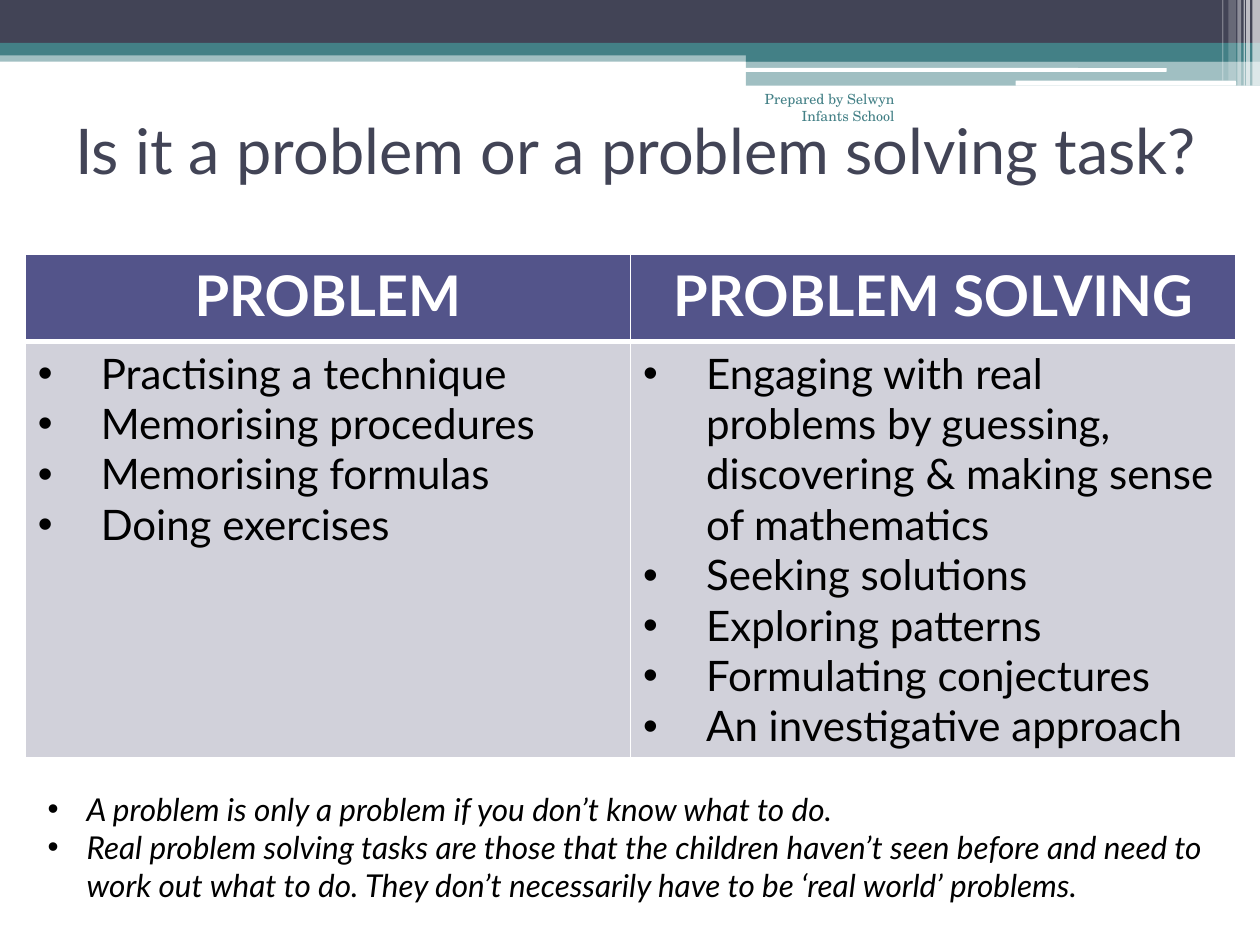
from dataclasses import dataclass

from lxml.etree import SubElement
from pptx import Presentation
from pptx.dml.color import RGBColor
from pptx.enum.shapes import MSO_SHAPE as Shape
from pptx.enum.text import MSO_ANCHOR as Anchor, PP_ALIGN as Align
from pptx.oxml import parse_xml
from pptx.oxml.ns import nsdecls, qn
from pptx.util import Inches, Pt


@dataclass(frozen=True)
class Theme:
    """Colours, fonts and type sizes of the slide."""
    slate: str = "424456"
    teal: str = "438086"
    indigo: str = "53548A"
    lilac: str = "D1D1DA"
    white: str = "FFFFFF"
    black: str = "000000"
    font: str = "Lato"
    credit_font: str = "TeX Gyre Schola"
    title_size: int = 36
    heading_size: int = 32
    list_size: int = 24
    note_size: int = 18
    credit_size: int = 8


THEME = Theme()

COMPARISON = {
    "PROBLEM": [
        "Practising a technique",
        "Memorising procedures",
        "Memorising formulas",
        "Doing exercises",
    ],
    "PROBLEM SOLVING": [
        "Engaging with real problems by guessing, discovering & making sense of mathematics",
        "Seeking solutions",
        "Exploring patterns",
        "Formulating conjectures",
        "An investigative approach",
    ],
}
NOTES = [
    "A problem is only a problem if you don’t know what to do.",
    "Real problem solving tasks are those that the children haven’t seen before and need to "
    "work out what to do. They don’t necessarily have to be ‘real world’ problems.",
]


def inches(box):
    """Turn a box of plain numbers into lengths."""
    return [Inches(length) for length in box]


def style(paragraph, size, color, font=THEME.font, align=Align.LEFT, bold=False, italic=False):
    """Format a whole paragraph."""
    paragraph.alignment = align
    paragraph.font.name = font
    paragraph.font.size = Pt(size)
    paragraph.font.bold = bold
    paragraph.font.italic = italic
    paragraph.font.color.rgb = RGBColor.from_string(color)


def fill_list(frame, items, indent, size, italic=False):
    """Write items as bulleted paragraphs with a hanging indent."""
    frame.text = "\n".join(items)
    for paragraph in frame.paragraphs:
        style(paragraph, size, THEME.black, italic=italic)
        properties = paragraph._p.get_or_add_pPr()
        properties.set("marL", str(Inches(indent)))
        properties.set("indent", str(-Inches(indent)))
        bullet_font = parse_xml(f'<a:buFont {nsdecls("a")} typeface="Arial"/>')
        bullet = parse_xml(f'<a:buChar {nsdecls("a")} char="•"/>')
        properties.insert_element_before(bullet_font, "a:tabLst", "a:defRPr", "a:extLst")
        properties.insert_element_before(bullet, "a:tabLst", "a:defRPr", "a:extLst")


def add_bar(slide, box, color, opacity=100, shape=Shape.RECTANGLE):
    """Add one borderless bar."""
    bar = slide.shapes.add_shape(shape, *inches(box))
    bar.shadow.inherit = False
    bar.line.fill.background()
    bar.fill.solid()
    bar.fill.fore_color.rgb = RGBColor.from_string(color)
    if opacity < 100:
        tint = bar._element.spPr.find(qn("a:solidFill"))[0]
        SubElement(tint, qn("a:alpha"), val=str(opacity * 1000))


def add_banner(slide, box):
    """Draw the layered bands and the fine stripes at the right end."""
    left, top, width, height = box
    right = left + width
    step = left + 5.92
    add_bar(slide, (left, top + 0.4, width, 0.09), THEME.teal, 50)
    add_bar(slide, (left, top, width, 0.34), THEME.slate)
    add_bar(slide, (left, top + 0.34, width, 0.1), THEME.teal)
    add_bar(slide, (step, top + 0.39, right - step, 0.1), THEME.teal)
    add_bar(slide, (step, top + 0.48, right - step, 0.2), THEME.teal, 50)
    for x, y, length, thickness in ((5.91, 0.54, 3.35, 0.03), (8.06, 0.64, 1.75, 0.04)):
        add_bar(slide, (left + x, top + y, length, thickness), THEME.white,
                shape=Shape.ROUNDED_RECTANGLE)
    stripes = (
        (0.06, 0.06, height, 65),
        (0.11, 0.03, height, 65),
        (0.13, 0.01, height, 60),
        (0.18, 0.03, height, 40),
        (0.25, 0.06, height - 0.04, 20),
        (0.3, 0.01, height - 0.04, 30),
    )
    for offset, thickness, length, opacity in stripes:
        add_bar(slide, (right - offset, top, thickness, length), THEME.white, opacity)


def add_title(slide, box):
    """Place the question in the title placeholder."""
    title = slide.shapes.title
    title.left, title.top, title.width, title.height = inches(box)
    title.text_frame.text = "Is it a problem or a problem solving task?"
    title.text_frame.vertical_anchor = Anchor.MIDDLE
    style(title.text_frame.paragraphs[0], THEME.title_size, THEME.slate, align=Align.CENTER)


def paint_cell(cell, color, bottom):
    """Fill a cell and rule it in white."""
    cell.fill.solid()
    cell.fill.fore_color.rgb = RGBColor.from_string(color)
    for position, (side, width) in enumerate(zip("LRTB", (1, 1, 1, bottom))):
        rule = parse_xml(
            f'<a:ln{side} {nsdecls("a")} w="{Pt(width)}"><a:solidFill>'
            f'<a:srgbClr val="{THEME.white}"/></a:solidFill></a:ln{side}>')
        cell._tc.get_or_add_tcPr().insert(position, rule)


def add_comparison(slide, box):
    """Set the two kinds of task side by side."""
    table = slide.shapes.add_table(2, len(COMPARISON), *inches(box)).table
    heading_height = 0.69
    table.rows[0].height = Inches(heading_height)
    table.rows[1].height = Inches(box[3] - heading_height)
    for column, (heading, traits) in enumerate(COMPARISON.items()):
        heading_cell, traits_cell = table.cell(0, column), table.cell(1, column)
        heading_cell.text = heading
        style(heading_cell.text_frame.paragraphs[0], THEME.heading_size, THEME.white,
              align=Align.CENTER, bold=True)
        paint_cell(heading_cell, THEME.indigo, bottom=3)
        fill_list(traits_cell.text_frame, traits, 0.5, THEME.list_size)
        paint_cell(traits_cell, THEME.lilac, bottom=1)


def add_notes(slide, box):
    """Add the two closing remarks."""
    frame = slide.shapes.add_textbox(*inches(box)).text_frame
    frame.word_wrap = True
    fill_list(frame, NOTES, 0.31, THEME.note_size, italic=True)


def add_credit(slide, box):
    """Add the name of the school that prepared the slide."""
    frame = slide.shapes.add_textbox(*inches(box)).text_frame
    frame.word_wrap = True
    frame.text = "Prepared by Selwyn Infants School"
    style(frame.paragraphs[0], THEME.credit_size, THEME.teal, THEME.credit_font, Align.RIGHT)


def main():
    """Build and save the slide."""
    deck = Presentation()
    deck.slide_width, deck.slide_height = Inches(10), Inches(7.5)
    slide = deck.slides.add_slide(deck.slide_layouts.get_by_name("Title Only"))
    add_banner(slide, (0, 0, 10, 0.68))
    add_title(slide, (0.28, 0.6, 9.53, 1.17))
    add_comparison(slide, (0.2, 2.02, 9.61, 3.99))
    add_notes(slide, (0.28, 6.22, 9.45, 1.31))
    add_credit(slide, (5.75, 0.67, 1.45, 0.5))
    deck.save("out.pptx")


if __name__ == "__main__":
    main()
